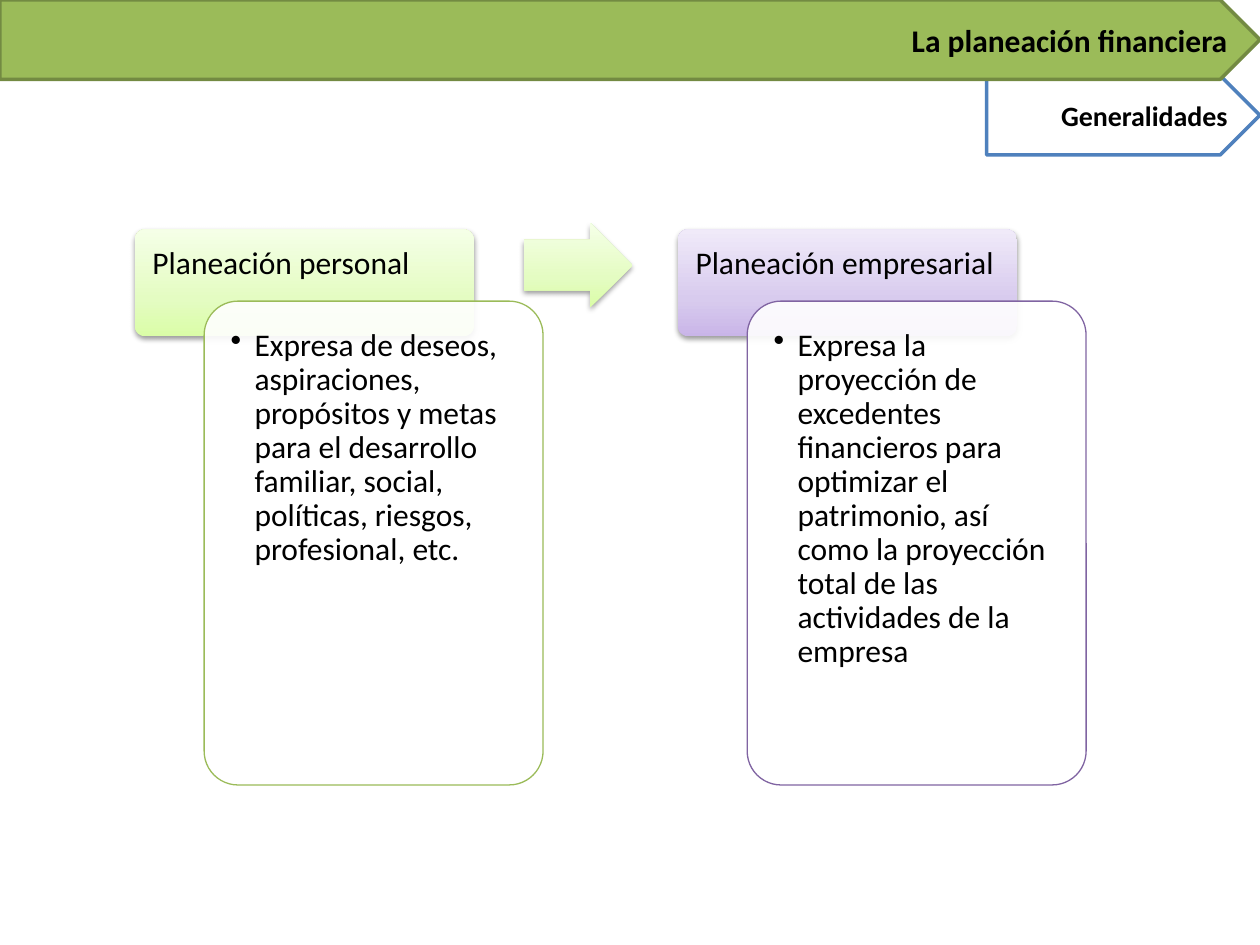
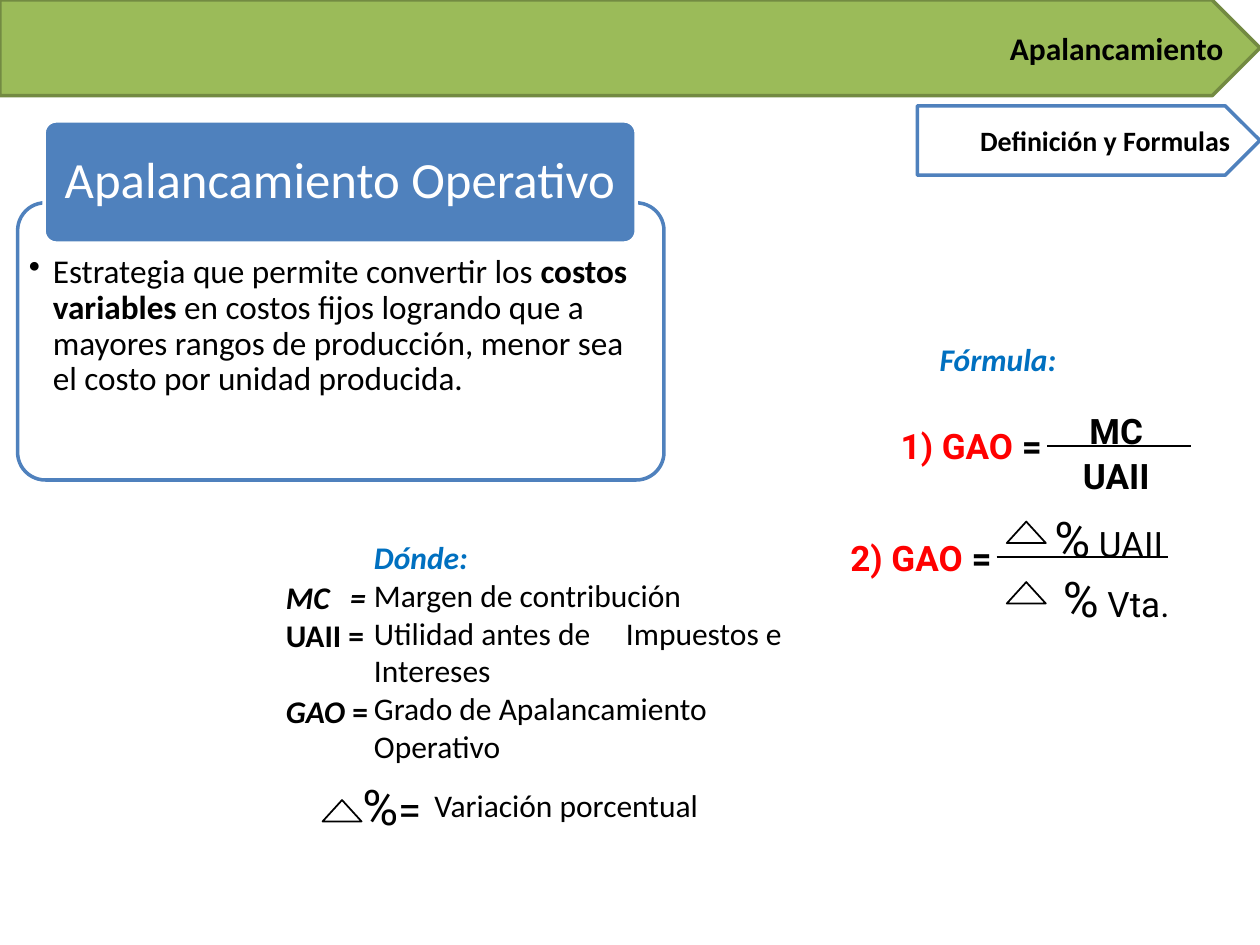
from lxml.etree import SubElement
from pptx import Presentation
from pptx.dml.color import RGBColor
from pptx.enum.shapes import MSO_CONNECTOR, MSO_SHAPE
from pptx.enum.text import MSO_ANCHOR, PP_ALIGN
from pptx.oxml.ns import qn
from pptx.util import Inches, Pt

COLORS = {
    "black": "000000", "white": "FFFFFF", "red": "FF0000", "label": "0070C0",
    "blue": "4F81BD", "green": "9BBB59", "olive": "738A42", "purple": "8064A2",
}
GREEN_FADE = ((0, "DAFDA7"), (35, "E4FCC2"), (100, "F5FFE7"))
PURPLE_FADE = ((0, "C9B5E8"), (35, "D8CBEE"), (100, "F0EAF9"))


def node(parent, tag, **attributes):
    return SubElement(parent, qn(tag), {key: str(value) for key, value in attributes.items()})


def run(text, size=18, color="black", style="", font="Calibri"):
    return text, size, color, style, font


def math_run(text, size=20, color="black", style=""):
    return run(text, size, color, style, "Roboto")


class Deck:
    def __init__(self):
        self.presentation = Presentation()
        self.presentation.slide_width = Inches(10)
        self.presentation.slide_height = Inches(7.5)
        self.slide = None

    def new_slide(self):
        self.slide = self.presentation.slides.add_slide(self.presentation.slide_layouts[6])

    def color(self, name):
        return RGBColor.from_string(COLORS[name])

    def shape(self, preset, box, fill=None, line=None, width=2.0, adjust=(), alpha=None):
        shape = self.slide.shapes.add_shape(preset, *map(Inches, box))
        shape.shadow.inherit = False
        for index, value in enumerate(adjust):
            shape.adjustments[index] = value
        if fill:
            shape.fill.solid()
            shape.fill.fore_color.rgb = self.color(fill)
            if alpha:
                tint = shape._element.spPr.find(qn("a:solidFill"))[0]
                node(tint, "a:alpha", val=alpha * 1000)
        else:
            shape.fill.background()
        if line:
            shape.line.color.rgb = self.color(line)
            shape.line.width = Pt(width)
        else:
            shape.line.fill.background()
        return shape

    def faded_shape(self, preset, box, fade, adjust):
        shape = self.shape(preset, box, adjust=adjust)
        shape.fill.gradient()
        shape.fill.gradient_angle = 90
        properties = shape._element.spPr
        stops = properties.find(qn("a:gradFill")).find(qn("a:gsLst"))
        for stop in list(stops):
            stops.remove(stop)
        for position, value in fade:
            node(node(stops, "a:gs", pos=position * 1000), "a:srgbClr", val=value)
        shadow = node(properties.find(qn("a:effectLst")), "a:outerShdw", blurRad=Pt(3.1),
                      dist=Pt(1.6), dir=90 * 60000, rotWithShape=0)
        node(node(shadow, "a:srgbClr", val=COLORS["black"]), "a:alpha", val=38000)

    def fill_text(self, shape, paragraphs, align=PP_ALIGN.LEFT, anchor=MSO_ANCHOR.TOP,
                  insets=(0.1, 0.05, 0.1, 0.05), spacing=None):
        frame = shape.text_frame
        frame.word_wrap = True
        frame.vertical_anchor = anchor
        (frame.margin_left, frame.margin_top,
         frame.margin_right, frame.margin_bottom) = map(Inches, insets)
        for index, runs in enumerate(paragraphs):
            paragraph = frame.add_paragraph() if index else frame.paragraphs[0]
            paragraph.alignment = align
            if spacing:
                paragraph.line_spacing = spacing
            for text, size, color, style, font in runs:
                piece = paragraph.add_run()
                piece.text = text
                piece.font.size = Pt(size)
                piece.font.name = font
                piece.font.color.rgb = self.color(color)
                piece.font.bold = "b" in style
                piece.font.italic = "i" in style
        return frame.paragraphs

    def text(self, box, *paragraphs, **layout):
        area = self.slide.shapes.add_textbox(*map(Inches, box))
        return self.fill_text(area, paragraphs, **layout)

    def bullet(self, box, runs, inset):
        item = self.text(box, runs, insets=(inset,) * 4, spacing=0.9)[0]
        properties = item._p.get_or_add_pPr()
        properties.set("marL", str(Inches(0.19)))
        properties.set("indent", str(-Inches(0.19)))
        node(properties, "a:buChar", char="•")

    def banner(self, box, title, size, fill, line):
        plate = self.shape(MSO_SHAPE.PENTAGON, box, fill, line)
        self.fill_text(plate, [[run(title, size, style="b")]], PP_ALIGN.RIGHT, MSO_ANCHOR.MIDDLE)

    def title(self, title, height):
        self.banner((0, 0, 10, height), title, 18, "green", "olive")

    def subtitle(self, title, left, top, height):
        self.banner((left, top, 10 - left, height), title, 16, "white", "blue")

    def panel(self, box, line, width):
        self.shape(MSO_SHAPE.ROUNDED_RECTANGLE, box, "white", line, width, (0.1,), 90)

    def planning_card(self, left, heading, body, fade, line):
        self.faded_shape(MSO_SHAPE.ROUNDED_RECTANGLE, (left, 1.82, 2.69, 0.85), fade, (0.1,))
        self.text((left, 1.82, 2.69, 0.57), [run(heading)],
                  insets=(0.14, 0.14, 0.14, 0.07), spacing=0.9)
        self.panel((left + 0.55, 2.39, 2.69, 3.84), line, 0.75)
        self.bullet((left + 0.62, 2.47, 2.53, 3.68), [run(body)], 0.14)

    def delta(self, left, top):
        self.shape(MSO_SHAPE.ISOSCELES_TRIANGLE, (left, top, 0.31, 0.17), line="black", width=1)

    def fraction_bar(self, left, right, y):
        bar = self.slide.shapes.add_connector(
            MSO_CONNECTOR.STRAIGHT, Inches(left), Inches(y), Inches(right), Inches(y))
        bar.line.color.rgb = self.color("black")
        bar.line.width = Pt(0.75)
        node(bar._element.spPr, "a:effectLst")

    def formula_name(self, left, top, name):
        self.text((left, top, 1.42, 0.44),
                  [math_run(name, color="red", style="b"), math_run(" =", style="b")])

    def percent(self, box, suffix, size=20):
        self.text(box, [math_run("%", 28), math_run(suffix, size)], align=PP_ALIGN.CENTER)


def build_planning(deck):
    deck.new_slide()
    deck.subtitle("Generalidades", 7.83, 0.6, 0.63)
    deck.title("La planeación financiera", 0.63)
    deck.planning_card(
        1.07, "Planeación personal",
        "Expresa de deseos, aspiraciones, propósitos y metas para el desarrollo "
        "familiar, social, políticas, riesgos, profesional, etc.", GREEN_FADE, "green")
    deck.faded_shape(MSO_SHAPE.RIGHT_ARROW, (4.16, 1.77, 0.86, 0.67), GREEN_FADE, (0.6, 0.5))
    deck.planning_card(
        5.38, "Planeación empresarial",
        "Expresa la proyección de excedentes financieros para optimizar el patrimonio, "
        "así como la proyección total de las actividades de la empresa", PURPLE_FADE, "purple")


def build_formulas(deck):
    deck.text((7.36, 2.65, 1.65, 0.4), [run("Fórmula:", color="label", style="bi")])
    deck.formula_name(7.05, 3.32, "1) GAO")
    for top, term in ((3.2, "MC"), (3.56, "UAII")):
        deck.text((8.31, top, 1.1, 0.44), [math_run(term, style="b")], align=PP_ALIGN.CENTER)
    deck.fraction_bar(8.31, 9.45, 3.54)
    deck.formula_name(6.65, 4.21, "2) GAO")
    deck.percent((8.25, 3.99, 1.1, 0.57), " UAII")
    deck.fraction_bar(7.91, 9.27, 4.42)
    deck.percent((8.23, 4.46, 1.26, 0.57), " Vta.")
    for top in (4.14, 4.62):
        deck.delta(7.99, top)


def build_legend(deck):
    meanings = ("Margen de contribución", "Utilidad antes de \tImpuestos e Intereses",
                "Grado de Apalancamiento Operativo")
    deck.text((2.87, 4.22, 3.46, 1.92), [run("Dónde:", color="label", style="bi")],
              *([run(meaning)] for meaning in meanings))
    contribution, _, leverage = deck.text(
        (2.17, 4.54, 0.94, 1.31), [run("MC\t=", style="bi")], [run("UAII =", style="b")],
        [run("GAO ", style="bi"), run("=", style="b")])
    tabs = node(contribution._p.get_or_add_pPr(), "a:tabLst")
    node(tabs, "a:tab", pos=Inches(0.51), algn="l")
    leverage.space_before = Pt(22)
    deck.text((3.35, 6.19, 3.46, 0.4), [run("Variación porcentual")])
    deck.delta(2.56, 6.35)
    deck.percent((2.48, 6.11, 1.26, 0.57), "=", 24)


def build_leverage(deck):
    deck.new_slide()
    build_formulas(deck)
    build_legend(deck)
    deck.title("Apalancamiento", 0.76)
    deck.panel((0.14, 1.61, 5.13, 2.2), "blue", 2)
    deck.bullet((0.19, 1.98, 5.03, 1.31), [
        run("Estrategia que permite convertir los ", 19),
        run("costos variables ", 19, style="b"),
        run("en costos fijos logrando que a mayores rangos de producción, "
            "menor sea el costo por unidad producida.", 19)], 0.04)
    deck.shape(MSO_SHAPE.ROUNDED_RECTANGLE, (0.35, 0.96, 4.7, 0.97), "blue", "white",
               adjust=(0.1,))
    deck.text((0.38, 0.99, 4.64, 0.91), [run("Apalancamiento Operativo", 29, "white")],
              align=PP_ALIGN.CENTER, anchor=MSO_ANCHOR.MIDDLE,
              insets=(0.06, 0.04, 0.06, 0.04), spacing=0.9)
    deck.subtitle("Definición y Formulas", 7.28, 0.84, 0.55)


def main():
    deck = Deck()
    build_planning(deck)
    build_leverage(deck)
    deck.presentation.save("out.pptx")


if __name__ == "__main__":
    main()
